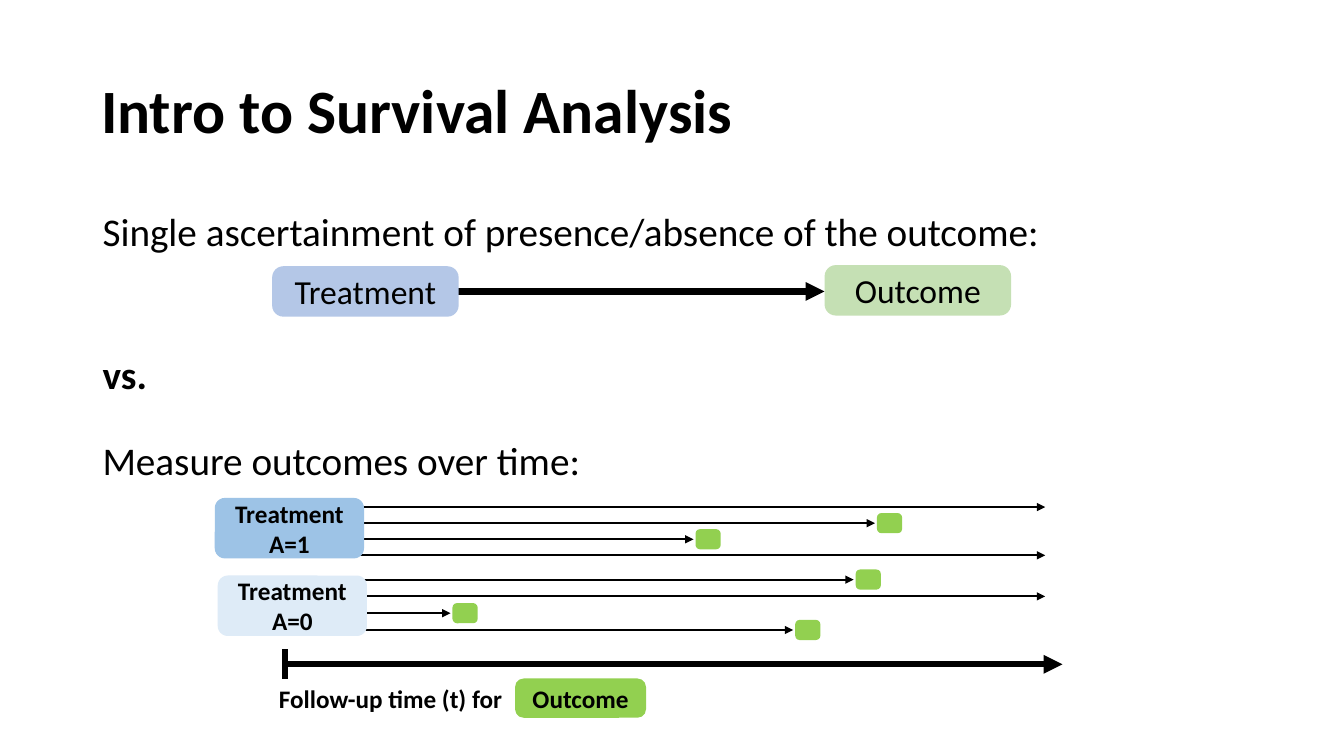
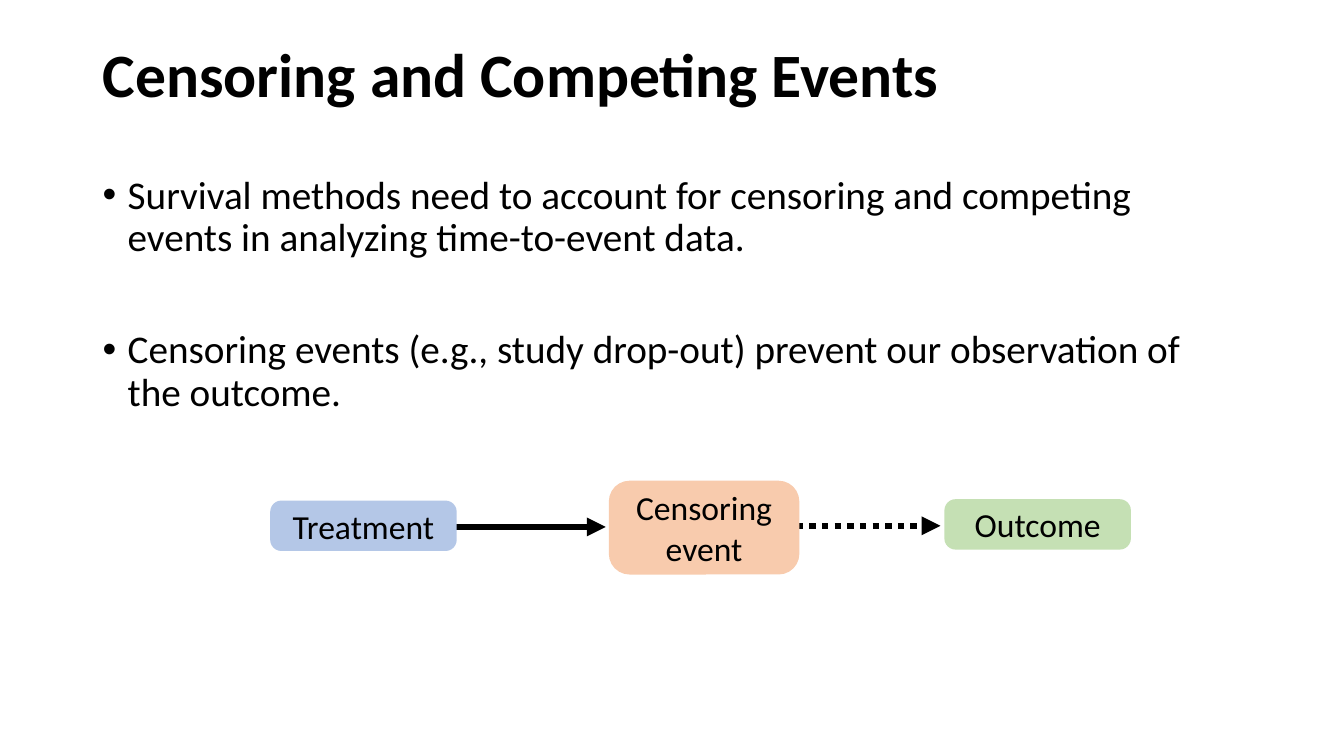
import dataclasses

import pptx
import pptx.dml.color
import pptx.enum.dml
import pptx.enum.shapes
import pptx.enum.text
import pptx.oxml.ns
import pptx.oxml.xmlchemy
import pptx.util
from lxml import etree

Pt = pptx.util.Pt
qn = pptx.oxml.ns.qn
ALIGN = pptx.enum.text.PP_ALIGN
ANCHOR = pptx.enum.text.MSO_ANCHOR


@dataclasses.dataclass(frozen=True)
class Theme:
    """Fonts, type sizes, colours and line weights of both slides."""

    font: str = "Calibri"
    title_size: float = 44
    body_size: float = 28
    node_size: float = 24
    label_size: float = 18
    spacing: float = 0.9
    ink: str = "000000"
    treatment: str = "B4C7E7"
    outcome: str = "C5E0B4"
    censoring: str = "F8CBAD"
    treated: str = "9DC3E6"
    untreated: str = "DEEBF7"
    event: str = "92D050"
    thick: float = 4.5
    thin: float = 1.5
    corner: float = 0.221


THEME = Theme()
BODY_LEFT = 66.2
BODY_WIDTH = 828
NODE_SIZE = (133.2, 36)
ARM_SIZE = (106.6, 43.2)
MARKER_SIZE = (18, 14.4)
MARKER_GAP = 1.4
FOLLOW_UP_END = 746.6


def color(value):
    """Turn a hex string into a colour."""
    return pptx.dml.color.RGBColor.from_string(value)


def format_text(frame, size, bold=False, align=ALIGN.LEFT):
    """Give every run of a frame its font, size, weight and alignment."""
    frame.word_wrap = True
    for paragraph in frame.paragraphs:
        paragraph.alignment = align
        for run in paragraph.runs:
            run.font.name = THEME.font
            run.font.size = Pt(size)
            run.font.bold = bold
            run.font.color.rgb = color(THEME.ink)


def add_titled_slide(deck, title, left, top):
    """Add a title-only slide with its title placed and formatted."""
    slide = deck.slides.add_slide(deck.slide_layouts[5])
    heading = slide.shapes.title
    heading.left, heading.top = Pt(left), Pt(top)
    heading.width, heading.height = Pt(BODY_WIDTH), Pt(104.4)
    frame = heading.text_frame
    frame.text = title
    frame.vertical_anchor = ANCHOR.MIDDLE
    frame.auto_size = pptx.enum.text.MSO_AUTO_SIZE.NONE
    format_text(frame, THEME.title_size, bold=True)
    frame.paragraphs[0].line_spacing = THEME.spacing
    return slide


def add_text(slide, text, left, top, width, height, size, bold=False):
    """Add a plain text box and return its frame."""
    box = slide.shapes.add_textbox(Pt(left), Pt(top), Pt(width), Pt(height))
    box.text_frame.text = text
    format_text(box.text_frame, size, bold)
    return box.text_frame


def add_body(slide, top, lines, gaps):
    """Add the body lines, each after its own gap, and return the paragraphs."""
    frame = add_text(slide, "\n".join(lines), BODY_LEFT, top, BODY_WIDTH, 486 - top, THEME.body_size)
    for paragraph, gap in zip(frame.paragraphs, gaps):
        paragraph.line_spacing = THEME.spacing
        paragraph.space_before = Pt(gap)
    return frame.paragraphs


def add_bullet(paragraph, indent=18):
    """Give a paragraph a hanging round bullet."""
    properties = paragraph._p.get_or_add_pPr()
    properties.set("marL", str(Pt(indent)))
    properties.set("indent", str(-Pt(indent)))
    etree.SubElement(properties, qn("a:buFont")).set("typeface", "Arial")
    etree.SubElement(properties, qn("a:buChar")).set("char", "•")


def add_box(slide, left, top, size, fill, text="", text_size=THEME.node_size, bold=False, corner=THEME.corner):
    """Add a rounded box with optional centred text."""
    kind = pptx.enum.shapes.MSO_SHAPE.ROUNDED_RECTANGLE
    box = slide.shapes.add_shape(kind, Pt(left), Pt(top), Pt(size[0]), Pt(size[1]))
    box.adjustments[0] = corner
    box.shadow.inherit = False
    box.fill.solid()
    box.fill.fore_color.rgb = color(fill)
    box.line.fill.background()
    if text:
        box.text_frame.text = text
        box.text_frame.vertical_anchor = ANCHOR.MIDDLE
        format_text(box.text_frame, text_size, bold, ALIGN.CENTER)


def add_line(slide, start, end, weight=THEME.thick, arrow=True, dotted=False):
    """Add a straight line, by default with an arrowhead at its end."""
    kind = pptx.enum.shapes.MSO_CONNECTOR.STRAIGHT
    line = slide.shapes.add_connector(kind, *(Pt(value) for value in start + end))
    line.line.color.rgb = color(THEME.ink)
    line.line.width = Pt(weight)
    if dotted:
        line.line.dash_style = pptx.enum.dml.MSO_LINE.ROUND_DOT
    properties = line.element.spPr
    if arrow:
        etree.SubElement(properties.find(qn("a:ln")), qn("a:tailEnd")).set("type", "triangle")
    etree.SubElement(properties, qn("a:effectLst"))


def add_arm(slide, text, fill, left, top, first_row, pitch, follow_ups):
    """Add a treatment arm with one arrow per subject and its event markers."""
    for row, (end, has_event) in enumerate(follow_ups):
        y = first_row + row * pitch
        add_line(slide, (257.4, y), (end, y), THEME.thin)
        if has_event:
            add_box(slide, end + MARKER_GAP, y - MARKER_SIZE[1] / 2, MARKER_SIZE, THEME.event)
    add_box(slide, left, top, ARM_SIZE, fill, text, THEME.label_size, True, 0.167)


def build_intro(deck):
    """Build the slide on single ascertainment versus follow-up."""
    slide = add_titled_slide(deck, "Intro to Survival Analysis", 65, 28.8)
    lines = [
        "Single ascertainment of presence/absence of the outcome:",
        "vs.",
        "Measure outcomes over time:",
    ]
    paragraphs = add_body(slide, 148, lines, (0, 72.5, 31))
    paragraphs[1].runs[0].font.bold = True

    add_line(slide, (213, 208.2), (589, 208.2))
    add_box(slide, 194.4, 190.2, NODE_SIZE, THEME.treatment, "Treatment")
    add_box(slide, 589, 189.4, NODE_SIZE, THEME.outcome, "Outcome")

    treated = [(FOLLOW_UP_END, False), (625, True), (495.4, True), (FOLLOW_UP_END, False)]
    untreated = [(609.8, True), (FOLLOW_UP_END, False), (321.8, True), (566.6, True)]
    add_arm(slide, "Treatment\nA=1", THEME.treated, 153.4, 355.7, 362.2, 11.5, treated)
    add_arm(slide, "Treatment\nA=0", THEME.untreated, 155.5, 411.1, 414, 12, untreated)

    add_line(slide, (204.5, 474.5), (758.9, 474.5))
    add_line(slide, (203.8, 463.7), (203.8, 485.3), arrow=False)
    add_text(slide, "Follow-up time (t) for", 192.2, 484.6, 177, 29, THEME.label_size, True)
    add_box(slide, 367.9, 484.6, (93.6, 28.1), THEME.event, "Outcome", THEME.label_size, True)


def build_censoring(deck):
    """Build the slide on censoring and competing events."""
    slide = add_titled_slide(deck, "Censoring and Competing Events", BODY_LEFT, 2.9)
    lines = [
        "Survival methods need to account for censoring and competing events in analyzing time-to-event data.",
        "Censoring events (e.g., study drop-out) prevent our observation of the outcome.",
    ]
    for paragraph in add_body(slide, 121.7, lines, (0, 50)):
        add_bullet(paragraph)

    add_line(slide, (246.2, 376.4), (432.7, 376.4))
    add_line(slide, (560.2, 375.6), (671.8, 375.6), dotted=True)
    add_box(slide, 193, 357.6, NODE_SIZE, THEME.treatment, "Treatment")
    add_box(slide, 674.6, 356.6, NODE_SIZE, THEME.outcome, "Outcome")
    add_box(slide, 434.9, 343.4, (136.1, 67), THEME.censoring, "Censoring event")


def main():
    """Build and save the presentation."""
    deck = pptx.Presentation()
    deck.slide_width, deck.slide_height = Pt(960), Pt(540)
    build_intro(deck)
    build_censoring(deck)
    deck.save("out.pptx")


if __name__ == "__main__":
    main()
